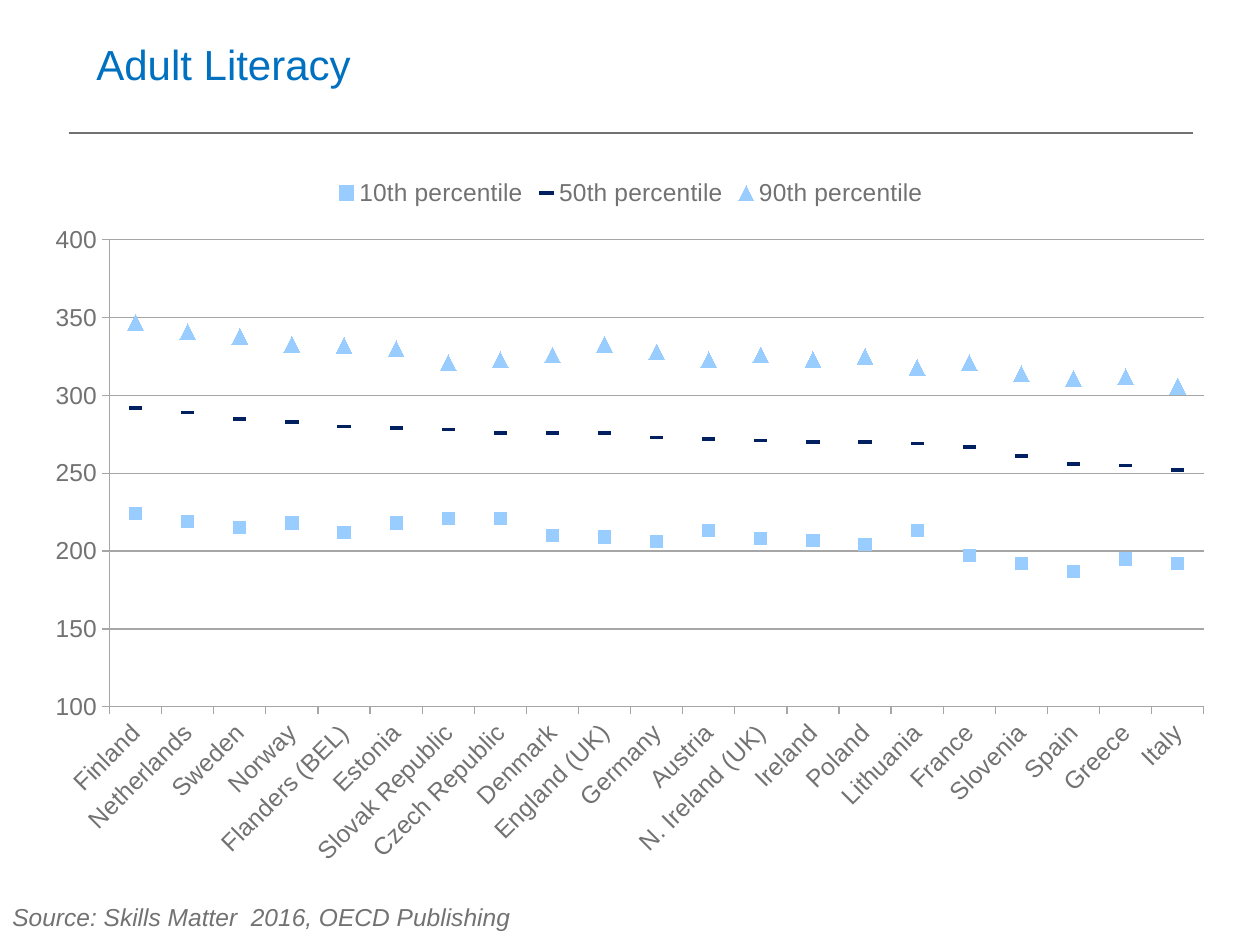
from lxml import etree
from pptx import Presentation
from pptx.chart.data import CategoryChartData
from pptx.dml.color import RGBColor
from pptx.enum.chart import XL_CHART_TYPE, XL_LEGEND_POSITION, XL_MARKER_STYLE, XL_TICK_MARK
from pptx.enum.shapes import MSO_CONNECTOR
from pptx.enum.text import MSO_ANCHOR
from pptx.oxml import parse_xml
from pptx.oxml.ns import nsdecls, qn
from pptx.util import Pt

LINES = XL_CHART_TYPE.LINE_MARKERS
TOP = XL_LEGEND_POSITION.TOP
OUT = XL_TICK_MARK.OUTSIDE
NONE = XL_TICK_MARK.NONE
SQUARE = XL_MARKER_STYLE.SQUARE
DASH = XL_MARKER_STYLE.DASH
TRIANGLE = XL_MARKER_STYLE.TRIANGLE
STRAIGHT = MSO_CONNECTOR.STRAIGHT
MIDDLE = MSO_ANCHOR.MIDDLE

COLORS = {"title": "0070C0", "text": "727272", "grid": "A6A6A6",
          "pale": "99CCFF", "dark": "002060"}
FONT = "Arial"
LANDS = ["Finland", "Netherlands", "Sweden", "Norway", "Flanders (BEL)", "Estonia",
         "Slovak Republic", "Czech Republic", "Denmark", "England (UK)", "Germany",
         "Austria", "N. Ireland (UK)", "Ireland", "Poland", "Lithuania", "France",
         "Slovenia", "Spain", "Greece", "Italy"]
SERIES = [
    ("10th percentile", SQUARE, 7, "pale",
     [224, 219, 215, 218, 212, 218, 221, 221, 210, 209, 206,
      213, 208, 207, 204, 213, 197, 192, 187, 195, 192]),
    ("50th percentile", DASH, 7, "dark",
     [292, 289, 285, 283, 280, 279, 278, 276, 276, 276, 273,
      272, 271, 270, 270, 269, 267, 261, 256, 255, 252]),
    ("90th percentile", TRIANGLE, 9, "pale",
     [347, 341, 338, 333, 332, 330, 321, 323, 326, 333, 328,
      323, 326, 323, 325, 318, 321, 314, 311, 312, 306]),
]


def px(n):
    return round(n * 914400 / 126)


def color(name):
    return RGBColor.from_string(COLORS[name])


def style(font, size, name):
    font.name = FONT
    font.size = Pt(size)
    font.color.rgb = color(name)


def add_text(slide, box, text, size, name, italic=False):
    frame = slide.shapes.add_textbox(*map(px, box)).text_frame
    frame.word_wrap = True
    frame.vertical_anchor = MIDDLE
    line = frame.paragraphs[0]
    line.text = text
    style(line.font, size, name)
    line.font.italic = italic


def add_head(slide, box):
    left, top, width, height = box
    add_text(slide, (left + 15, top, width - 15, height - 8), "Adult Literacy", 24, "title")
    base = top + height
    rule = slide.shapes.add_connector(
        STRAIGHT, px(left), px(base), px(left + width), px(base))
    rule.line.color.rgb = color("text")
    rule.line.width = Pt(0.75)
    etree.SubElement(rule._element.spPr, qn("a:effectLst"))


def set_plot(chart, box, inner):
    left, top, width, height = inner
    sizes = {"x": left / box[2], "y": top / box[3],
             "w": width / box[2], "h": height / box[3]}
    items = "".join(f'<c:{key} val="{val:.3f}"/>' for key, val in sizes.items())
    area = chart._chartSpace.chart.plotArea
    for old in area.findall(qn("c:layout")):
        area.remove(old)
    area.insert(0, parse_xml(
        f'<c:layout {nsdecls("c")}><c:manualLayout><c:layoutTarget val="inner"/>'
        f'<c:xMode val="edge"/><c:yMode val="edge"/>{items}</c:manualLayout></c:layout>'))


def add_graph(slide, box):
    data = CategoryChartData(number_format="0")
    data.categories = LANDS
    for name, _, _, _, vals in SERIES:
        data.add_series(name, vals)
    chart = slide.shapes.add_chart(LINES, *map(px, box), data).chart
    style(chart.font, 14, "text")
    chart.has_title = False
    chart.has_legend = True
    chart.legend.position = TOP
    chart.legend.include_in_layout = False
    style(chart.legend.font, 14, "text")
    for row, (_, mark, size, tint, _) in zip(chart.plots[0].series, SERIES):
        row.smooth = False
        row.format.line.fill.background()
        row.marker.style = mark
        row.marker.size = size
        row.marker.format.fill.solid()
        row.marker.format.fill.fore_color.rgb = color(tint)
        row.marker.format.line.fill.background()
    chart.plots[0].vary_by_categories = False
    down, across = chart.value_axis, chart.category_axis
    for axis in (down, across):
        axis.major_tick_mark = OUT
        axis.minor_tick_mark = NONE
        axis.format.line.color.rgb = color("grid")
        style(axis.tick_labels.font, 14, "text")
    down.minimum_scale, down.maximum_scale, down.major_unit = 100, 400, 50
    down.tick_labels.number_format = "0"
    down.tick_labels.number_format_is_linked = False
    down.has_major_gridlines = True
    down.major_gridlines.format.line.color.rgb = color("grid")
    across._element.find(qn("c:txPr")).find(qn("a:bodyPr")).set("rot", "-2700000")
    set_plot(chart, box, (77, 75, 1094, 467))


def main():
    deck = Presentation()
    deck.slide_width, deck.slide_height = px(1260), px(945)
    slide = deck.slides.add_slide(deck.slide_layouts[6])
    add_head(slide, (69, 3, 1124, 130))
    add_graph(slide, (33, 165, 1196, 714))
    add_text(slide, (0, 895, 794, 43), "Source: Skills Matter  2016, OECD Publishing",
             14, "text", True)
    deck.save("out.pptx")


if __name__ == "__main__":
    main()
